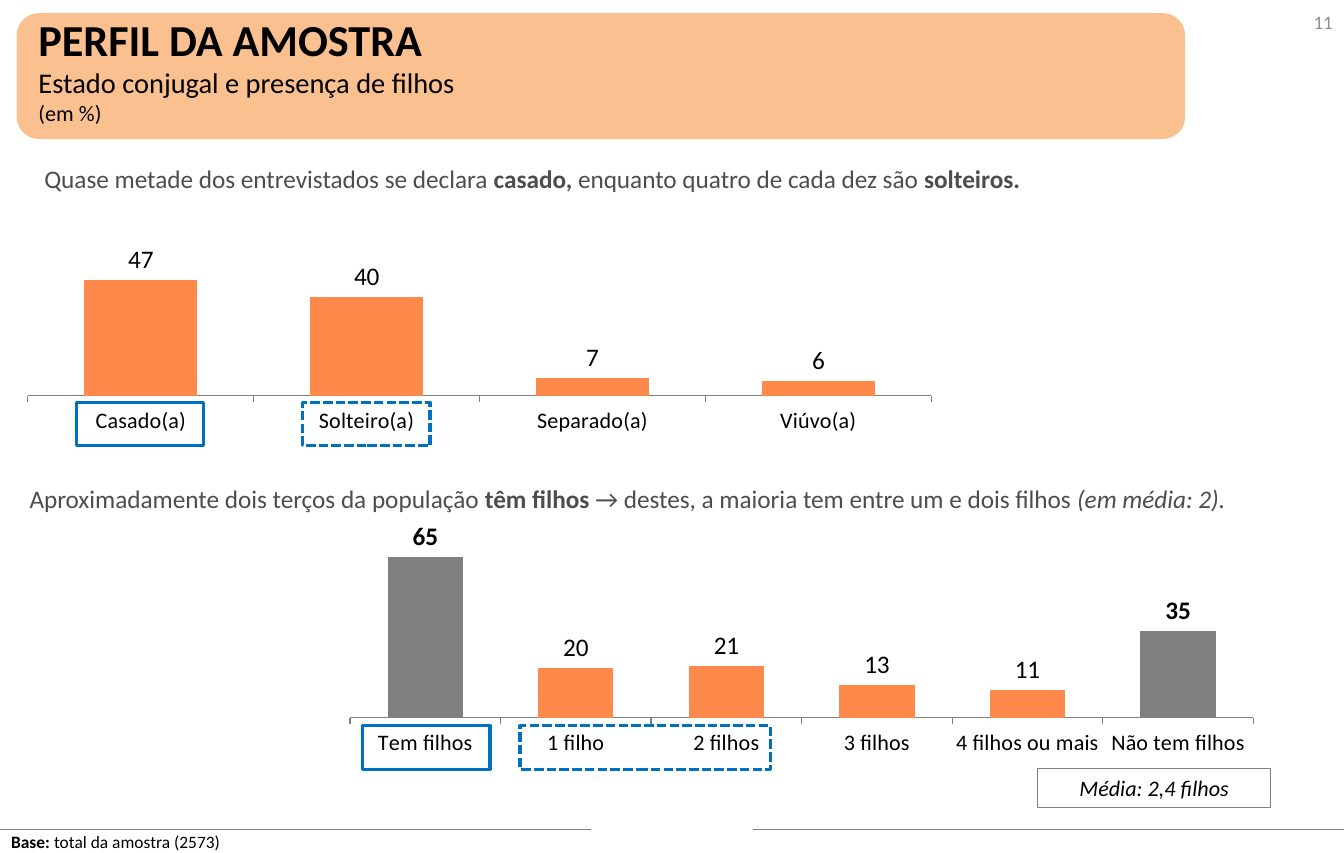
import pptx
import pptx.chart.data
import pptx.dml.color
import pptx.enum.chart
import pptx.enum.dml
import pptx.enum.shapes
import pptx.enum.text
import pptx.oxml
import pptx.oxml.ns
import pptx.util

Cm = pptx.util.Cm
Pt = pptx.util.Pt
ALIGN = pptx.enum.text.PP_ALIGN
ANCHOR = pptx.enum.text.MSO_ANCHOR
SHAPE = pptx.enum.shapes.MSO_SHAPE
SOLID = pptx.enum.dml.MSO_LINE.SOLID
DASH = pptx.enum.dml.MSO_LINE.SQUARE_DOT

FONT = "Calibri"
BLACK, GRAY, TEXT_GRAY = "000000", "808080", "4D4D4D"
PEACH, ORANGE, BLUE = "FAC090", "FF894A", "0070C0"

HEADER = (0.41, 0.33, 26.01, 2.74)
FOOTER_Y = 18.52
FOOTER_LINES = [(0, 13.2), (16.81, 30)]
CHART_SIZE = (20.19, 6.48)
PLOT_HEIGHT = 0.85

CHARTS = [
    ((0.61, 3.33), [("Casado(a)", 47), ("Solteiro(a)", 40),
                    ("Separado(a)", 7), ("Viúvo(a)", 6)], []),
    ((7.8, 10.52), [("Tem filhos", 65), ("1 filho", 20), ("2 filhos", 21),
                    ("3 filhos", 13), ("4 filhos ou mais", 11),
                    ("Não tem filhos", 35)], [0, 5]),
]

TEXTS = [
    ((0.61, 0.15, 18, 2.9), BLACK, ALIGN.LEFT, ANCHOR.TOP, [
        [("PERFIL DA AMOSTRA", 28, "b")],
        [("Estado conjugal e presença de filhos", 18, "")],
        [("(em %)", 14, "")]]),
    ((26.8, -0.03, 3.2, 1.02), "8C8C8C", ALIGN.RIGHT, ANCHOR.MIDDLE, [
        [("11", 12, "")]]),
    ((0.74, 3.53, 29, 0.94), TEXT_GRAY, ALIGN.LEFT, ANCHOR.TOP, [
        [("Quase metade dos entrevistados se declara ", 16, ""),
         ("casado, ", 16, "b"),
         ("enquanto quatro de cada dez são ", 16, ""),
         ("solteiros.", 16, "b")]]),
    ((0.41, 10.67, 29, 0.94), TEXT_GRAY, ALIGN.LEFT, ANCHOR.TOP, [
        [("Aproximadamente dois terços da população ", 16, ""),
         ("têm filhos ", 16, "b"),
         ("→ destes, a maioria tem entre um e dois filhos ", 16, ""),
         ("(em média: 2).", 16, "i")]]),
    ((0, 18.44, 10.34, 0.6), BLACK, ALIGN.LEFT, ANCHOR.TOP, [
        [("Base: ", 11, "b"), ("total da amostra (2573)", 11, "")]]),
]

MEAN_BOX = (23.16, 17.17, 5.21, 0.86)
MEAN_TEXT = [[("Média: 2,4 filhos", 14, "i")]]

HIGHLIGHTS = [
    (1.7, 8.99, 2.84, SOLID),
    (6.76, 8.99, 2.84, DASH),
    (8.1, 16.21, 2.84, SOLID),
    (11.61, 16.21, 5.59, DASH),
]
HIGHLIGHT_HEIGHT = 0.97


def rgb(color):
    return pptx.dml.color.RGBColor.from_string(color)


def lengths(values):
    return [Cm(v) for v in values]


def set_font(font, size, color, style=""):
    font.name = FONT
    font.size = Pt(size)
    font.color.rgb = rgb(color)
    font.bold = "b" in style
    font.italic = "i" in style


def fill_text(sp, paragraphs, color, align, anchor):
    tf = sp.text_frame
    tf.word_wrap = True
    tf.vertical_anchor = anchor
    for i, runs in enumerate(paragraphs):
        p = tf.add_paragraph() if i else tf.paragraphs[0]
        p.alignment = align
        for text, size, style in runs:
            r = p.add_run()
            r.text = text
            set_font(r.font, size, color, style)


def add_box(s, kind, box, line, width, fill=None, dash=SOLID):
    sp = s.shapes.add_shape(kind, *lengths(box))
    sp.shadow.inherit = False
    if fill:
        sp.fill.solid()
        sp.fill.fore_color.rgb = rgb(fill)
    else:
        sp.fill.background()
    sp.line.color.rgb = rgb(line)
    sp.line.width = Pt(width)
    sp.line.dash_style = dash
    return sp


def add_footer_line(s, x1, x2):
    line = s.shapes.add_connector(pptx.enum.shapes.MSO_CONNECTOR.STRAIGHT,
                                  *lengths((x1, FOOTER_Y, x2, FOOTER_Y)))
    line.line.color.rgb = rgb(GRAY)
    line.line.width = Pt(0.75)
    line._element.spPr.append(pptx.oxml.parse_xml(
        f'<a:effectLst {pptx.oxml.ns.nsdecls("a")}/>'))


def set_plot_layout(chart):
    area = chart._chartSpace.chart.plotArea
    for old in area.findall(pptx.oxml.ns.qn("c:layout")):
        area.remove(old)
    area.insert(0, pptx.oxml.parse_xml(
        f'<c:layout {pptx.oxml.ns.nsdecls("c")}><c:manualLayout>'
        '<c:layoutTarget val="inner"/><c:xMode val="edge"/><c:yMode val="edge"/>'
        '<c:x val="0"/><c:y val="0"/><c:w val="1"/>'
        f'<c:h val="{PLOT_HEIGHT}"/></c:manualLayout></c:layout>'))


def add_bars(s, position, rows, totals):
    data = pptx.chart.data.CategoryChartData(number_format="###0")
    data.categories = [name for name, _ in rows]
    data.add_series("Series 1", [value for _, value in rows])
    chart = s.shapes.add_chart(
        pptx.enum.chart.XL_CHART_TYPE.COLUMN_CLUSTERED,
        *lengths(position + CHART_SIZE), data).chart
    chart.has_legend = False
    chart.has_title = False
    set_font(chart.font, 18, BLACK)
    set_plot_layout(chart)

    axis = chart.value_axis
    axis.minimum_scale, axis.maximum_scale = 0, 100
    axis.has_major_gridlines = False
    axis.visible = False
    axis = chart.category_axis
    axis.major_tick_mark = pptx.enum.chart.XL_TICK_MARK.OUTSIDE
    axis.format.line.color.rgb = rgb(GRAY)
    axis.format.line.width = Pt(0.75)
    set_font(axis.tick_labels.font, 14, BLACK)

    plot = chart.plots[0]
    plot.gap_width = 100
    plot.vary_by_categories = False
    series = plot.series[0]
    series.format.fill.solid()
    series.format.fill.fore_color.rgb = rgb(ORANGE)
    outside = pptx.enum.chart.XL_LABEL_POSITION.OUTSIDE_END
    labels = series.data_labels
    labels.show_value = True
    labels.number_format = "###0"
    labels.number_format_is_linked = False
    labels.position = outside
    set_font(labels.font, 16, BLACK)
    for i in totals:
        point = series.points[i]
        point.format.fill.solid()
        point.format.fill.fore_color.rgb = rgb(GRAY)
        set_font(point.data_label.font, 16, BLACK, "b")
        point.data_label.position = outside


def main():
    prs = pptx.Presentation()
    prs.slide_width, prs.slide_height = Cm(30), Cm(19.05)
    s = prs.slides.add_slide(prs.slide_layouts[6])
    add_box(s, SHAPE.ROUNDED_RECTANGLE, HEADER, PEACH, 2, PEACH)
    for x1, x2 in FOOTER_LINES:
        add_footer_line(s, x1, x2)
    for position, rows, totals in CHARTS:
        add_bars(s, position, rows, totals)
    for box, color, align, anchor, paragraphs in TEXTS:
        sp = s.shapes.add_textbox(*lengths(box))
        fill_text(sp, paragraphs, color, align, anchor)
    sp = add_box(s, SHAPE.RECTANGLE, MEAN_BOX, GRAY, 0.75)
    fill_text(sp, MEAN_TEXT, BLACK, ALIGN.CENTER, ANCHOR.MIDDLE)
    for x, y, width, dash in HIGHLIGHTS:
        add_box(s, SHAPE.RECTANGLE, (x, y, width, HIGHLIGHT_HEIGHT), BLUE, 2, dash=dash)
    prs.save("out.pptx")


if __name__ == "__main__":
    main()
